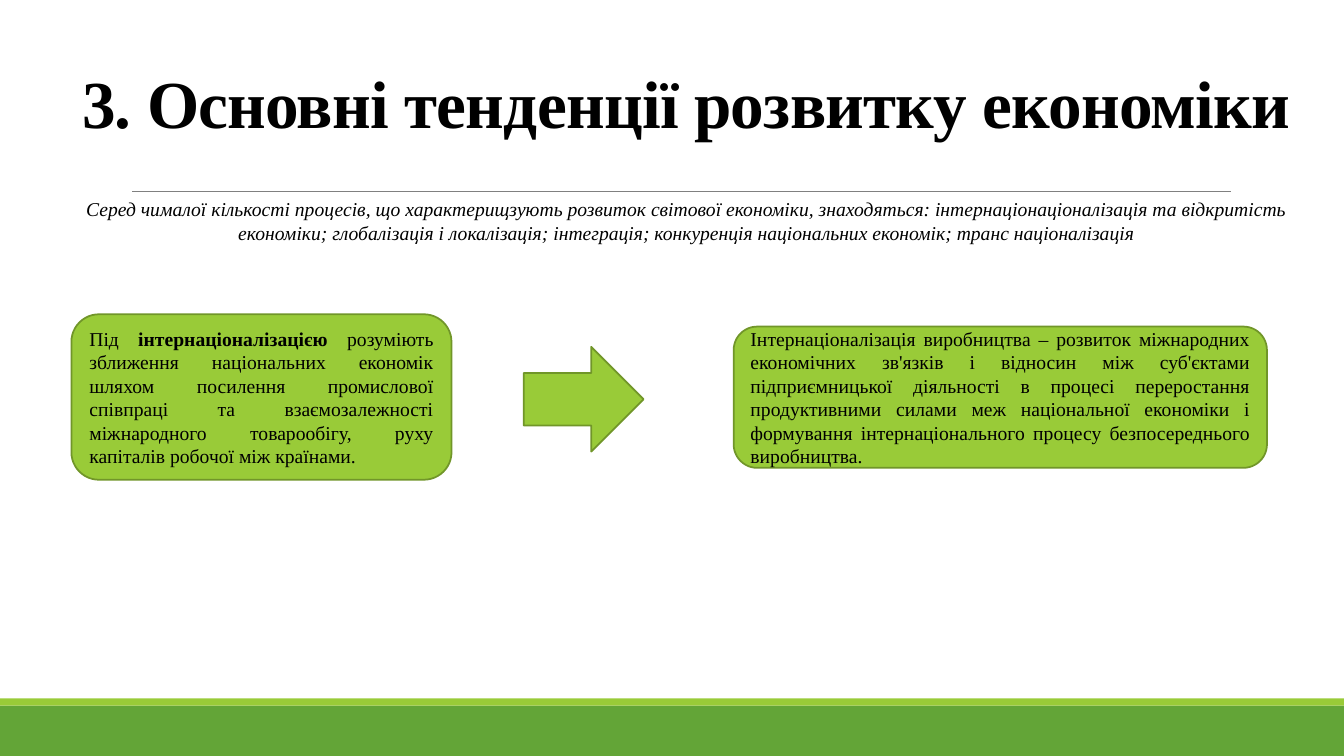
from lxml.etree import SubElement
from pptx import Presentation
from pptx.dml.color import RGBColor
from pptx.enum.shapes import MSO_CONNECTOR as CONN, MSO_SHAPE as SHAPE
from pptx.enum.text import MSO_ANCHOR as ANCHOR, MSO_AUTO_SIZE as AUTO, PP_ALIGN as ALIGN
from pptx.oxml.ns import qn
from pptx.util import Cm, Pt

GREEN = RGBColor(0x63, 0xA5, 0x37)
LIME = RGBColor(0x99, 0xCB, 0x38)
OLIVE = RGBColor(0x71, 0x96, 0x29)
GREY = RGBColor(0x80, 0x80, 0x80)
BLACK = RGBColor(0, 0, 0)
FONT = "Times New Roman"
WIDTH, HEIGHT = 33.87, 19.05

TITLE = "3. Основні тенденції розвитку економіки"
INTRO = (
    "Серед чималої кількості процесів, що характерищзують розвиток світової економіки, "
    "знаходяться: інтернаціонаціоналізація та відкритість економіки; глобалізація і "
    "локалізація; інтеграція; конкуренція національних економік; транс націоналізація"
)
DEFINITION = [
    ("Під ", False),
    ("інтернаціоналізацією ", True),
    ("розуміють зближення національних економік шляхом посилення промислової співпраці "
     "та взаємозалежності міжнародного товарообігу, руху капіталів робочої між країнами.", False),
]
PRODUCTION = [
    ("Інтернаціоналізація виробництва – розвиток міжнародних економічних зв'язків і відносин "
     "між суб'єктами підприємницької діяльності в процесі переростання продуктивними силами "
     "меж національної економіки і формування інтернаціонального процесу безпосереднього "
     "виробництва.", False),
]


def add_block(s, kind, x, y, w, h, fill, outline=None):
    """Draw a flat preset shape, outlined if a line colour is given."""
    sp = s.shapes.add_shape(kind, Cm(x), Cm(y), Cm(w), Cm(h))
    sp.shadow.inherit = False
    sp.fill.solid()
    sp.fill.fore_color.rgb = fill
    if outline is None:
        sp.line.fill.background()
    else:
        sp.line.color.rgb = outline
        sp.line.width = Pt(1.25)
    return sp


def write(p, runs, size, align):
    """Fill a paragraph with (text, bold) runs in the slide's font."""
    p.alignment = align
    p.font.name, p.font.size, p.font.color.rgb = FONT, Pt(size), BLACK
    for text, bold in runs:
        r = p.add_run()
        r.text = text
        r.font.bold = bold


def add_footer(s, x, bottom, w):
    """Draw the two green bands that stand on the given bottom edge."""
    dark, light = 1.27, 0.18
    add_block(s, SHAPE.RECTANGLE, x, bottom - dark, w, dark, GREEN)
    add_block(s, SHAPE.RECTANGLE, x, bottom - dark - light, w, light, LIME)


def add_heading(s, x, y, w, h):
    """Place the title in the box, with a thin rule below it."""
    title = s.shapes.title
    title.left, title.top, title.width, title.height = Cm(x), Cm(y), Cm(w), Cm(h)
    tf = title.text_frame
    tf.vertical_anchor, tf.word_wrap, tf.auto_size = ANCHOR.BOTTOM, True, AUTO.NONE
    tf.margin_left = tf.margin_right = Cm(0)
    p = tf.paragraphs[0]
    write(p, [(TITLE, True)], 48, ALIGN.CENTER)
    p.line_spacing = 0.85
    p.runs[0].font._element.set("spc", "-50")

    rule_y = Cm(y + h + 1.12)
    rule = s.shapes.add_connector(CONN.STRAIGHT, Cm(x + 1.53), rule_y, Cm(x + w - 1.78), rule_y)
    rule.line.color.rgb = GREY
    rule.line.width = Pt(0.5)
    SubElement(rule._element.spPr, qn("a:effectLst"))


def add_intro(s, x, y, w, h):
    """Place the centred italic introduction."""
    tf = s.shapes.add_textbox(Cm(x), Cm(y), Cm(w), Cm(h)).text_frame
    tf.word_wrap = True
    p = tf.paragraphs[0]
    write(p, [(INTRO, False)], 14, ALIGN.CENTER)
    p.font.italic = True


def add_card(s, x, y, w, h, runs):
    """Draw a rounded card with justified text."""
    sp = add_block(s, SHAPE.ROUNDED_RECTANGLE, x, y, w, h, LIME, OLIVE)
    tf = sp.text_frame
    tf.word_wrap, tf.vertical_anchor = True, ANCHOR.MIDDLE
    write(tf.paragraphs[0], runs, 14, ALIGN.JUSTIFY)


def add_flow(s, x, y, w, h):
    """Place the definition card, the arrow and the production card in a row."""
    add_card(s, x, y, 9.58, h, DEFINITION)
    add_block(s, SHAPE.RIGHT_ARROW, x + 11.4, y + 0.82, 3.02, 2.64, LIME, OLIVE)
    add_card(s, x + w - 13.44, y + 0.31, 13.44, 3.56, PRODUCTION)


def main():
    """Build the slide and save it."""
    prs = Presentation()
    prs.slide_width, prs.slide_height = Cm(WIDTH), Cm(HEIGHT)
    s = prs.slides.add_slide(prs.slide_layouts[5])
    add_footer(s, 0, HEIGHT, WIDTH)
    add_heading(s, 1.8, 1.27, 30.99, 2.44)
    add_intro(s, 1.17, 4.85, 32.28, 1.45)
    add_flow(s, 1.8, 7.92, 30.13, 4.17)
    prs.save("out.pptx")


if __name__ == "__main__":
    main()
